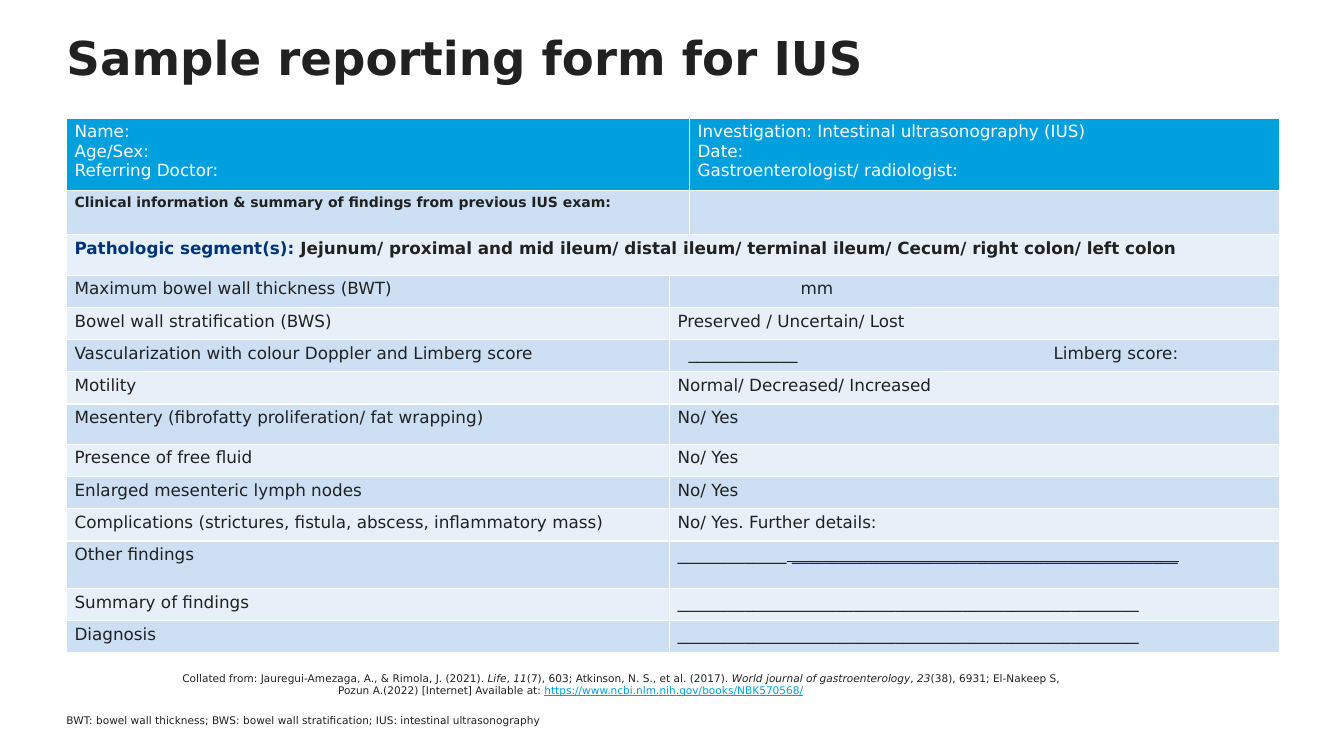
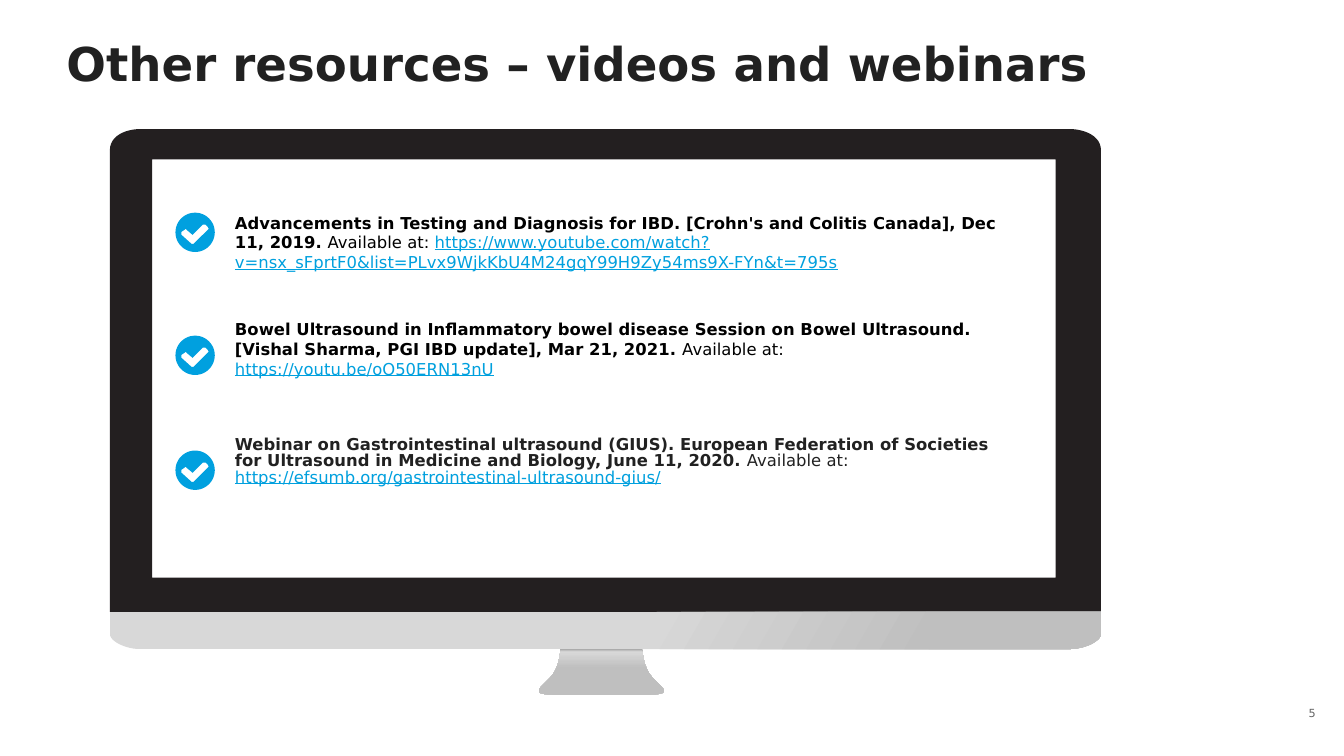
from math import cos, pi, sin

from lxml.etree import SubElement
from pptx import Presentation
from pptx.dml.color import RGBColor
from pptx.enum.text import MSO_ANCHOR, PP_ALIGN
from pptx.oxml.ns import qn
from pptx.util import Inches, Pt

FONT = "DejaVu Sans"
COLORS = {
    "ink": "212121", "black": "000000", "white": "FFFFFF", "grey": "646464",
    "citation": "222222", "navy": "003479", "link": "00A0DE", "blue": "00A0DF",
    "band_dark": "CCDFF3", "band_light": "E7F0F9", "frame": "231F20",
}
STYLES = {
    "plain": {}, "bold": {"bold": True}, "italic": {"italic": True},
    "underline": {"underline": True},
    "link": {"underline": True, "color": "link"},
    "label": {"bold": True, "color": "navy"},
}
LEFT = 0.66

# Reporting form: (height, left cell, right cell); a cell is a list of lines,
# a line is a string or a list of (text, style) spans
FORM_TITLE = "Sample reporting form for IUS"
FORM_COLUMNS = [5.98, 0.16, 5.85]
BLANK_LINE = "_" * 55
FORM_ROWS = [
    (0.72, ["Name:", "Age/Sex:", "Referring Doctor:"],
     ["Investigation: Intestinal ultrasonography (IUS)", "Date:",
      "Gastroenterologist/ radiologist:"]),
    (0.44, [[("Clinical information & summary of findings from previous IUS exam:",
              "bold")]], []),
    (0.4, [[("Pathologic segment(s): ", "label"),
            ("Jejunum/ proximal and mid ileum/ distal ileum/ terminal ileum/ "
             "Cecum/ right colon/ left colon", "bold")]], []),
    (0.32, ["Maximum bowel wall thickness (BWT)"],
     [[("\t", "plain"), ("\t", "underline"), ("\tmm", "plain")]]),
    (0.32, ["Bowel wall stratification (BWS)"], ["Preserved / Uncertain/ Lost"]),
    (0.32, ["Vascularization with colour Doppler and Limberg score"],
     [[("\t_____________", "plain"), ("\t", "underline"),
       ("\tLimberg score:", "plain")]]),
    (0.32, ["Motility"], ["Normal/ Decreased/ Increased"]),
    (0.4, ["Mesentery (fibrofatty proliferation/ fat wrapping)"], ["No/ Yes"]),
    (0.32, ["Presence of free fluid"], ["No/ Yes"]),
    (0.32, ["Enlarged mesenteric lymph nodes"], ["No/ Yes"]),
    (0.32, ["Complications (strictures, fistula, abscess, inflammatory mass)"],
     ["No/ Yes. Further details:"]),
    (0.47, ["Other findings"],
     [[("_____________", "plain"), (" " + "_" * 46, "underline")]]),
    (0.32, ["Summary of findings"], [BLANK_LINE]),
    (0.32, ["Diagnosis"], [BLANK_LINE]),
]
HEADER_ROW, CLINICAL_ROW, SEGMENT_ROW = 0, 1, 2
TAB_STOPS = {3: [0.21, 1.06, 1.22], 5: [0.11, 3.2, 3.73]}

CITATION = [
    ("Collated from: Jauregui-Amezaga, A., & Rimola, J. (2021). ", "plain"),
    ("Life", "italic"), (", ", "plain"), ("11", "italic"),
    ("(7), 603; Atkinson, N. S., et al. (2017). ", "plain"),
    ("World journal of gastroenterology", "italic"), (", ", "plain"),
    ("23", "italic"),
    ("(38), 6931; El-Nakeep S, Pozun A.(2022) [Internet] Available at: ", "plain"),
    ("https://www.ncbi.nlm.nih.gov/books/NBK570568/", "link"),
]
ABBREVIATIONS = ("BWT: bowel wall thickness; BWS: bowel wall stratification; "
                 "IUS: intestinal ultrasonography")

# Resources: (source, address, text colour, space before, line spacing, tick top)
RESOURCES_TITLE = "Other resources – videos and webinars"
PAGE_NUMBER = "5"
RESOURCES = [
    ("Advancements in Testing and Diagnosis for IBD. "
     "[Crohn's and Colitis Canada], Dec 11, 2019. ",
     "https://www.youtube.com/watch?v=nsx_sFprtF0&list="
     "PLvx9WjkKbU4M24gqY99H9Zy54ms9X-FYn&t=795s", "black", 0, 1.0, 2.11),
    ("Bowel Ultrasound in Inflammatory bowel disease Session on Bowel Ultrasound. "
     "[Vishal Sharma, PGI IBD update], Mar 21, 2021. ",
     "https://youtu.be/oO50ERN13nU", "black", 34, 1.0, 3.33),
    ("Webinar on Gastrointestinal ultrasound (GIUS). European Federation of "
     "Societies for Ultrasound in Medicine and Biology, June 11, 2020. ",
     "https://efsumb.org/gastrointestinal-ultrasound-gius/",
     "ink", 42, Pt(11.7), 4.47),
]

# Outlines: pairs are corners, sextuples are curves (two handles and an end)
FRAME = [(1.4, 1.28), (1.24, 1.28, 1.09, 1.35, 1.09, 1.49), (1.09, 6.07),
         (10.92, 6.07), (10.92, 1.49), (10.92, 1.35, 10.76, 1.28, 10.6, 1.28)]
SCREEN = [(1.51, 1.58), (10.47, 1.58), (10.47, 5.73), (1.51, 5.73)]
CHIN = [(1.09, 6.07), (1.09, 6.29), (1.09, 6.36, 1.24, 6.44, 1.4, 6.44),
        (10.6, 6.44), (10.76, 6.44, 10.92, 6.36, 10.92, 6.29), (10.92, 6.07)]
STAND = [(5.56, 6.44), (5.56, 6.44, 5.55, 6.63, 5.46, 6.72),
         (5.38, 6.81, 5.24, 6.89, 5.48, 6.89), (6.45, 6.89),
         (6.69, 6.89, 6.55, 6.81, 6.47, 6.72),
         (6.38, 6.63, 6.37, 6.44, 6.37, 6.44)]
CHIN_STOPS = [(0, "D8D8D8"), (54, "D8D8D8"), (83, "BFBFBF"), (100, "BFBFBF")]
STAND_STOPS = [(0, "A5A5A5"), (6, "D8D8D8"), (42, "BFBFBF"), (100, "BFBFBF")]
TICK_LEFT, TICK_SIZE = 1.74, 0.39
TICK = [(0.32, 0.14), (0.3, 0.12), (0.29, 0.12), (0.27, 0.12), (0.17, 0.22),
        (0.11, 0.17), (0.1, 0.16), (0.09, 0.17), (0.06, 0.19), (0.06, 0.22),
        (0.16, 0.31), (0.18, 0.31), (0.32, 0.17), (0.33, 0.16)]


def rgb(name):
    return RGBColor.from_string(COLORS[name])


def write_line(para, line, size, color="ink"):
    spans = [(line, "plain")] if isinstance(line, str) else line
    for text, style in spans:
        span = para.add_run()
        span.text = text
        look = STYLES[style]
        font = span.font
        font.name, font.size = FONT, Pt(size)
        font.bold = look.get("bold", False)
        font.italic = look.get("italic", False)
        font.underline = look.get("underline", False)
        font.color.rgb = rgb(look.get("color", color))


def write_lines(frame, lines, size, color="ink"):
    for index, line in enumerate(lines):
        para = frame.add_paragraph() if index else frame.paragraphs[0]
        write_line(para, line, size, color)
    return frame.paragraphs


def add_box(page, left, top, width, height, anchor=MSO_ANCHOR.TOP):
    box = page.shapes.add_textbox(*map(Inches, (left, top, width, height)))
    frame = box.text_frame
    frame.word_wrap = True
    frame.vertical_anchor = anchor
    frame.margin_left = frame.margin_right = 0
    frame.margin_top = frame.margin_bottom = 0
    return frame


def add_page(deck, title, title_top):
    page = deck.slides.add_slide(deck.slide_layouts[6])
    frame = add_box(page, LEFT, title_top, 11.1, 0.5, MSO_ANCHOR.BOTTOM)
    para = write_lines(frame, [[(title, "bold")]], 33.3)[0]
    para.line_spacing = 0.9
    return page


def trace(segments, steps=12):
    """Turn corners and curves into a list of points."""
    points = []
    for segment in segments:
        if len(segment) == 2:
            points.append(segment)
            continue
        knots = [points[-1], segment[:2], segment[2:4], segment[4:]]
        for step in range(1, steps + 1):
            t = step / steps
            weights = ((1 - t) ** 3, 3 * t * (1 - t) ** 2, 3 * t * t * (1 - t), t ** 3)
            points.append(tuple(sum(w * knot[axis] for w, knot in zip(weights, knots))
                                for axis in (0, 1)))
    return points


def add_outline(page, contours, color=None, stops=(), angle=0):
    contours = [[(Inches(x), Inches(y)) for x, y in points] for points in contours]
    builder = page.shapes.build_freeform(*contours[0][0])
    for index, points in enumerate(contours):
        if index:
            builder.move_to(*points[0])
        builder.add_line_segments(points[1:], close=True)
    shape = builder.convert_to_shape()
    shape.shadow.inherit = False
    shape.line.fill.background()
    if color:
        shape.fill.solid()
        shape.fill.fore_color.rgb = rgb(color)
    else:
        shape.fill.gradient()
        shape.fill.gradient_angle = (360 - angle) % 360
        stop_list = next(shape._element.iter(qn("a:gsLst")))
        for stop in list(stop_list):
            stop_list.remove(stop)
        for position, value in stops:
            stop = SubElement(stop_list, qn("a:gs"), pos=str(position * 1000))
            SubElement(stop, qn("a:srgbClr"), val=value)
    return shape


def add_form_table(page):
    heights = [row[0] for row in FORM_ROWS]
    table = page.shapes.add_table(
        len(FORM_ROWS), len(FORM_COLUMNS), Inches(LEFT), Inches(1.17),
        Inches(sum(FORM_COLUMNS)), Inches(sum(heights))).table
    for column, width in zip(table.columns, FORM_COLUMNS):
        column.width = Inches(width)
    for index, (height, left, right) in enumerate(FORM_ROWS):
        table.rows[index].height = Inches(height)
        cells = [table.cell(index, column) for column in range(3)]
        is_header = index == HEADER_ROW
        band = "blue" if is_header else "band_dark" if index % 2 else "band_light"
        for cell in cells:
            cell.fill.solid()
            cell.fill.fore_color.rgb = rgb(band)
            cell.margin_left = cell.margin_right = Inches(0.08)
            cell.margin_top = cell.margin_bottom = Inches(0.04)
        # The top rows split after the narrow column, the others before it
        if index == SEGMENT_ROW:
            cells[0].merge(cells[2])
            right_cell = None
        elif index <= CLINICAL_ROW:
            cells[0].merge(cells[1])
            right_cell = cells[2]
        else:
            cells[1].merge(cells[2])
            right_cell = cells[1]
        size = 10 if index == CLINICAL_ROW else 12
        color = "white" if is_header else "ink"
        write_lines(cells[0].text_frame, left, size, color)
        if right_cell:
            paras = write_lines(right_cell.text_frame, right, size, color)
            if index in TAB_STOPS:
                tabs = SubElement(paras[0]._p.get_or_add_pPr(), qn("a:tabLst"))
                for stop in TAB_STOPS[index]:
                    SubElement(tabs, qn("a:tab"), pos=str(Inches(stop)), algn="l")


def build_form(deck):
    page = add_page(deck, FORM_TITLE, 0.35)
    # Citation and abbreviations
    frame = add_box(page, LEFT, 6.94, 10, 0.27, MSO_ANCHOR.BOTTOM)
    citation, abbreviations = write_lines(frame, [CITATION, ABBREVIATIONS], 7.5,
                                          "citation")
    citation.alignment = PP_ALIGN.CENTER
    citation._p.get_or_add_pPr().set("indent", str(Inches(1)))
    abbreviations.space_before = Pt(12.2)
    abbreviations.runs[0].font.color.rgb = rgb("ink")
    add_form_table(page)


def build_resources(deck):
    page = add_page(deck, RESOURCES_TITLE, 0.41)
    # Page number
    frame = add_box(page, 12.73, 6.89, 0.32, 0.36, MSO_ANCHOR.MIDDLE)
    write_lines(frame, [PAGE_NUMBER], 8, "grey")[0].alignment = PP_ALIGN.RIGHT
    # Monitor
    page.shapes.add_group_shape([
        add_outline(page, [trace(FRAME), SCREEN], "frame"),
        add_outline(page, [trace(CHIN)], stops=CHIN_STOPS, angle=30),
        add_outline(page, [trace(STAND)], stops=STAND_STOPS, angle=90),
    ])
    # Resource list
    frame = add_box(page, 2.33, 2.11, 7.79, 3.26)
    radius = TICK_SIZE / 2
    for index, (source, address, color, before, spacing, top) in enumerate(RESOURCES):
        para = frame.add_paragraph() if index else frame.paragraphs[0]
        para.space_before, para.line_spacing = Pt(before), spacing
        write_line(para, [(source, "bold"), ("Available at: ", "plain"),
                          (address, "link")], 11.7, color)
        # Tick cut out of a disc
        disc = [(TICK_LEFT + radius * (1 + cos(pi * step / 24)),
                 top + radius * (1 + sin(pi * step / 24))) for step in range(48)]
        tick = [(TICK_LEFT + x, top + y) for x, y in TICK]
        add_outline(page, [disc, tick], "blue")


def main():
    deck = Presentation()
    deck.slide_width, deck.slide_height = Inches(13.33), Inches(7.5)
    build_form(deck)
    build_resources(deck)
    deck.save("out.pptx")


if __name__ == "__main__":
    main()
